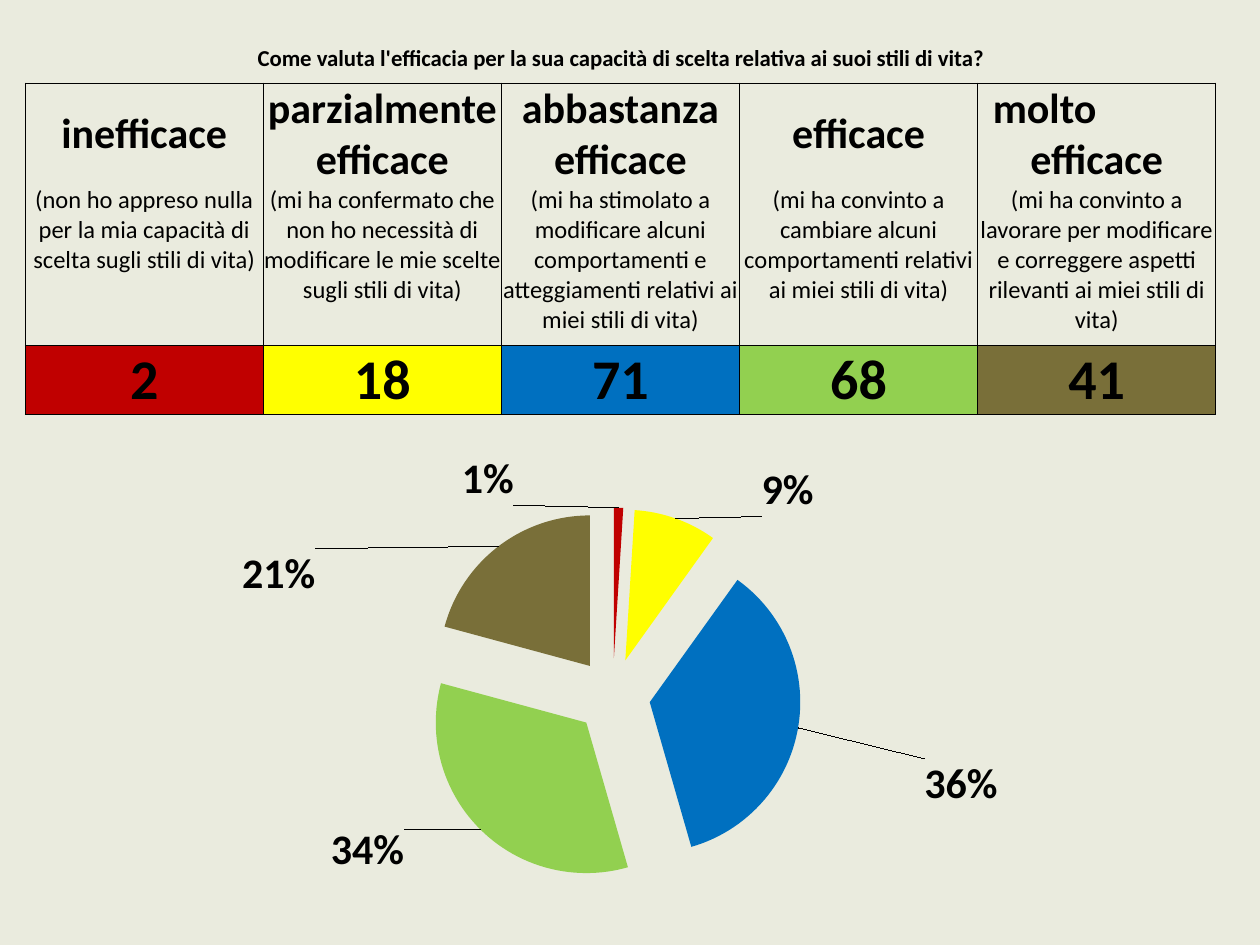
"""Builds a survey slide: a table of answers above an exploded pie chart."""
import pptx
import pptx.chart.data
import pptx.dml.color
import pptx.enum.chart
import pptx.enum.text
import pptx.oxml
import pptx.oxml.ns
import pptx.util
from pptx.util import Inches

RGBColor = pptx.dml.color.RGBColor
BLACK = RGBColor(0x00, 0x00, 0x00)
IVORY = RGBColor(0xEA, 0xEB, 0xDE)
RED = RGBColor(0xC0, 0x00, 0x00)
YELLOW = RGBColor(0xFF, 0xFF, 0x00)
BLUE = RGBColor(0x00, 0x70, 0xC0)
GREEN = RGBColor(0x92, 0xD0, 0x50)
OLIVE = RGBColor(0x79, 0x6F, 0x39)

QUESTION = "Come valuta l'efficacia per la sua capacità di scelta relativa ai suoi stili di vita?"
ANSWERS = [
    ("inefficace",
     "(non ho appreso nulla per la mia capacità di scelta sugli stili di vita)",
     2, 1, RED, (-0.11, 0.01)),
    ("parzialmente efficace",
     "(mi ha confermato che non ho necessità di modificare le mie scelte sugli stili di vita)",
     18, 9, YELLOW, (0.07, 0.01)),
    ("abbastanza efficace",
     "(mi ha stimolato a modificare alcuni comportamenti e atteggiamenti relativi ai miei stili di vita)",
     71, 36, BLUE, (0.1, 0.06)),
    ("efficace",
     "(mi ha convinto a cambiare alcuni comportamenti relativi ai miei stili di vita)",
     68, 34, GREEN, (-0.06, -0.02)),
    ("molto\nefficace",
     "(mi ha convinto a lavorare per modificare e correggere aspetti rilevanti ai miei stili di vita)",
     41, 21, OLIVE, (-0.15, 0.12)),
]
ROW_HEIGHTS = (0.38, 0.76, 1.27, 0.43)
COLUMN_WIDTH = 1.89


class SurveySlide:
    """Holds the style and the current slide."""

    font = "Calibri"
    explosion = 25

    def __init__(self, presentation):
        self.slide = presentation.slides.add_slide(presentation.slide_layouts[6])
        self.slide.background.fill.solid()
        self.slide.background.fill.fore_color.rgb = IVORY

    def style_font(self, font, size, bold):
        font.name = self.font
        font.size = pptx.util.Pt(size)
        font.bold = bold
        font.color.rgb = BLACK

    def borders(self, cell, edges):
        properties = cell._tc.get_or_add_tcPr()
        for position, edge in enumerate("LRTB"):
            paint = (f'<a:solidFill><a:srgbClr val="{BLACK}"/></a:solidFill>'
                     if edge in edges else "<a:noFill/>")
            properties.insert(position, pptx.oxml.parse_xml(
                f'<a:ln{edge} {pptx.oxml.ns.nsdecls("a")} w="6350">{paint}</a:ln{edge}>'))

    def cell(self, cell, text, size, bold, edges, fill=None, middle=True):
        cell.margin_left = cell.margin_right = cell.margin_top = cell.margin_bottom = 0
        anchors = pptx.enum.text.MSO_ANCHOR
        cell.vertical_anchor = anchors.MIDDLE if middle else anchors.TOP
        if fill is None:
            cell.fill.background()
        else:
            cell.fill.solid()
            cell.fill.fore_color.rgb = fill
        self.borders(cell, edges)
        cell.text_frame.text = text
        for paragraph in cell.text_frame.paragraphs:
            paragraph.alignment = pptx.enum.text.PP_ALIGN.CENTER
            for run in paragraph.runs:
                self.style_font(run.font, size, bold)

    def table(self, left, top):
        count = len(ANSWERS)
        table = self.slide.shapes.add_table(
            len(ROW_HEIGHTS), count, Inches(left), Inches(top),
            Inches(COLUMN_WIDTH * count), Inches(sum(ROW_HEIGHTS))).table
        table.first_row = table.horz_banding = False
        for row, height in zip(table.rows, ROW_HEIGHTS):
            row.height = Inches(height)
        table.cell(0, 0).merge(table.cell(0, count - 1))
        for column, (rating, meaning, votes, _, color, _) in enumerate(ANSWERS):
            table.columns[column].width = Inches(COLUMN_WIDTH)
            self.cell(table.cell(0, column), "" if column else QUESTION, 13, True, "B")
            self.cell(table.cell(1, column), rating, 24, True, "LRT")
            self.cell(table.cell(2, column), meaning, 14, False, "LRB", middle=False)
            self.cell(table.cell(3, column), str(votes), 32, True, "LRTB", color)
        molto = table.cell(1, count - 1).text_frame.paragraphs[0]
        molto.alignment = pptx.enum.text.PP_ALIGN.LEFT
        molto._p.get_or_add_pPr().set("marL", str(Inches(0.12)))

    def slice_label(self, index, offset):
        x, y = offset
        return pptx.oxml.parse_xml(
            f'<c:dLbl {pptx.oxml.ns.nsdecls("c", "a")}><c:idx val="{index}"/>'
            f'<c:layout><c:manualLayout><c:x val="{x}"/><c:y val="{y}"/></c:manualLayout></c:layout>'
            '<c:numFmt formatCode="0%" sourceLinked="0"/><c:spPr><a:noFill/></c:spPr>'
            '<c:txPr><a:bodyPr/><a:p><a:pPr><a:defRPr sz="2400" b="1">'
            f'<a:solidFill><a:srgbClr val="{BLACK}"/></a:solidFill>'
            f'<a:latin typeface="{self.font}"/></a:defRPr></a:pPr></a:p></c:txPr>'
            '<c:dLblPos val="outEnd"/><c:showLegendKey val="0"/><c:showVal val="0"/>'
            '<c:showCatName val="0"/><c:showSerName val="0"/><c:showPercent val="1"/>'
            '<c:showBubbleSize val="0"/></c:dLbl>')

    def place_plot(self, chart, x, y, width, height):
        plot_area = chart._chartSpace.chart.plotArea
        for layout in plot_area.findall(pptx.oxml.ns.qn("c:layout")):
            plot_area.remove(layout)
        plot_area.insert(0, pptx.oxml.parse_xml(
            f'<c:layout {pptx.oxml.ns.nsdecls("c")}><c:manualLayout>'
            '<c:layoutTarget val="inner"/><c:xMode val="edge"/><c:yMode val="edge"/>'
            f'<c:x val="{x}"/><c:y val="{y}"/><c:w val="{width}"/><c:h val="{height}"/>'
            '</c:manualLayout></c:layout>'))

    def pie(self, left, top, width, height):
        shares = pptx.chart.data.CategoryChartData()
        shares.categories = [str(number + 1) for number in range(len(ANSWERS))]
        shares.add_series("Series 1", [answer[3] for answer in ANSWERS])
        chart = self.slide.shapes.add_chart(
            pptx.enum.chart.XL_CHART_TYPE.PIE, Inches(left), Inches(top),
            Inches(width), Inches(height), shares).chart
        chart.has_title = chart.has_legend = False
        self.style_font(chart.font, 10, False)
        self.place_plot(chart, 0.32, 0.15, 0.33, 0.76)
        chart.plots[0].vary_by_categories = True
        series = chart.plots[0].series[0]
        labels = series.data_labels
        labels.show_percentage = True
        labels.show_value = False
        labels.number_format = "0%"
        labels.number_format_is_linked = False
        labels.position = pptx.enum.chart.XL_LABEL_POSITION.OUTSIDE_END
        self.style_font(labels.font, 24, True)
        for index, (_, _, _, _, color, offset) in enumerate(ANSWERS):
            fill = series.points[index].format.fill
            fill.solid()
            fill.fore_color.rgb = color
            labels._element.insert(index, self.slice_label(index, offset))
        leader = labels._element.find(pptx.oxml.ns.qn("c:showLeaderLines"))
        if leader is not None:
            labels._element.remove(leader)
        namespace = pptx.oxml.ns.nsdecls("c")
        labels._element.append(pptx.oxml.parse_xml(f'<c:showLeaderLines {namespace} val="1"/>'))
        series._element.find(pptx.oxml.ns.qn("c:dPt")).addprevious(
            pptx.oxml.parse_xml(f'<c:explosion {namespace} val="{self.explosion}"/>'))


def main():
    presentation = pptx.Presentation()
    presentation.slide_width = Inches(10)
    presentation.slide_height = Inches(7.5)
    survey = SurveySlide(presentation)
    survey.pie(0.28, 3.44, 9.45, 3.93)
    survey.table(0.2, 0.28)
    presentation.save("out.pptx")


if __name__ == "__main__":
    main()
